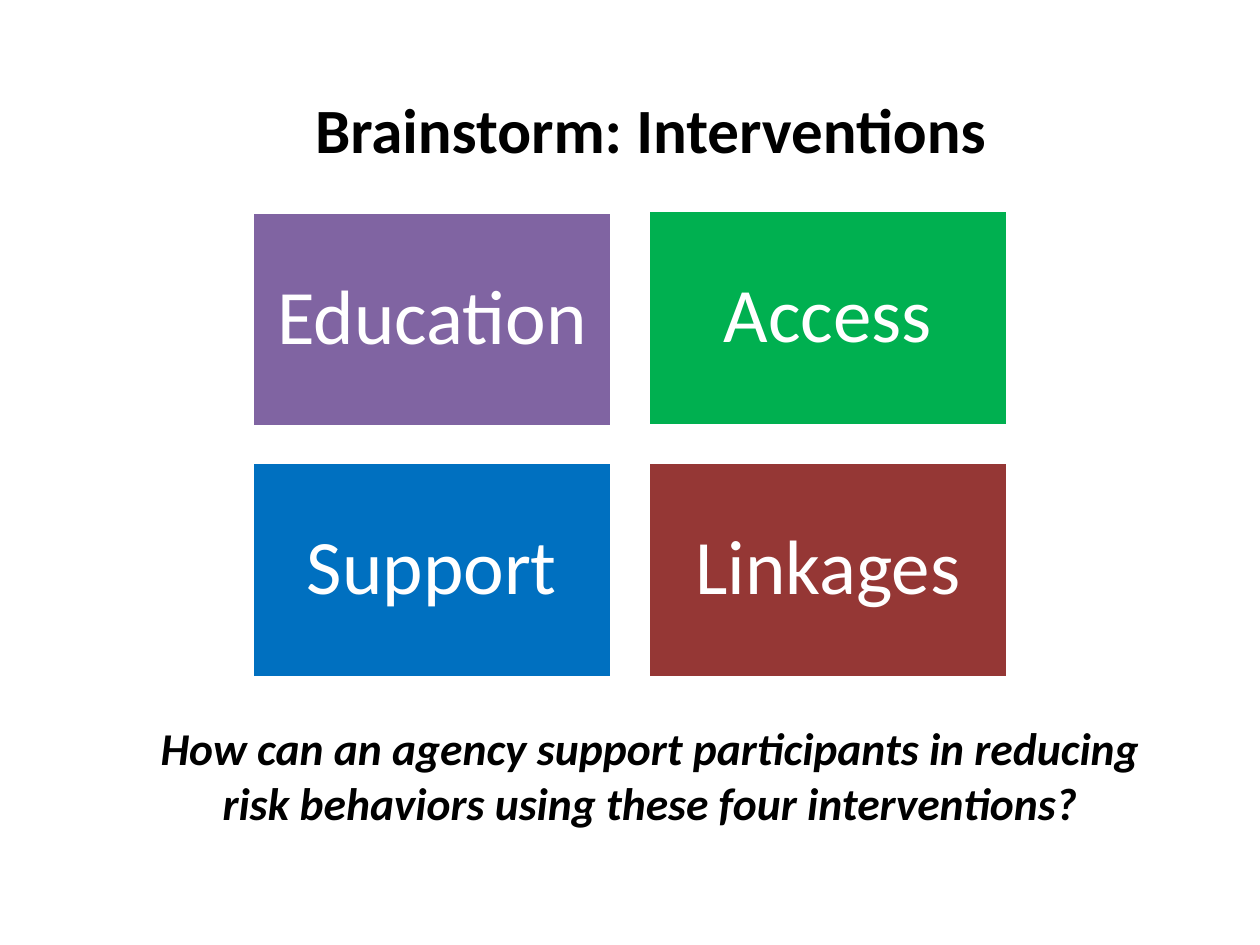
from dataclasses import dataclass

from pptx import Presentation
from pptx.dml.color import RGBColor
from pptx.enum.shapes import MSO_SHAPE
from pptx.enum.text import MSO_ANCHOR, MSO_AUTO_SIZE, PP_ALIGN
from pptx.util import Cm, Pt

RECTANGLE = MSO_SHAPE.RECTANGLE
TOP = MSO_ANCHOR.TOP
MIDDLE = MSO_ANCHOR.MIDDLE
CENTER = PP_ALIGN.CENTER
NO_AUTOFIT = MSO_AUTO_SIZE.NONE


@dataclass(frozen=True)
class Theme:
    font: str = "Calibri"
    text: str = "000000"
    light: str = "FFFFFF"
    purple: str = "8064A2"
    green: str = "00B050"
    blue: str = "0070C0"
    red: str = "953735"
    title_size: int = 36
    card_size: int = 44
    question_size: int = 26


theme = Theme()


def write_text(shape, text, size, color, anchor, bold=False, italic=False):
    frame = shape.text_frame
    frame.text = text
    frame.word_wrap = True
    frame.auto_size = NO_AUTOFIT
    frame.vertical_anchor = anchor
    paragraph = frame.paragraphs[0]
    paragraph.alignment = CENTER
    font = paragraph.runs[0].font
    font.name = theme.font
    font.size = Pt(size)
    font.bold = bold
    font.italic = italic
    font.color.rgb = RGBColor.from_string(color)
    return frame


presentation = Presentation()
presentation.slide_width = Cm(25.4)
presentation.slide_height = Cm(19.05)
slide = presentation.slides.add_slide(presentation.slide_layouts[5])

title = slide.shapes.title
title.left, title.top, title.width, title.height = Cm(4.01), Cm(1.7), Cm(18.21), Cm(2.11)
write_text(title, "Brainstorm: Interventions", theme.title_size, theme.text, TOP, bold=True)

card_width, card_height = Cm(7.26), Cm(4.34)
left_column, right_column = Cm(5.08), Cm(13.06)
upper_row, lower_row = Cm(4.24), Cm(9.32)
education_offset = Cm(0.03)
interventions = [
    ("Education", theme.purple, left_column, upper_row + education_offset),
    ("Access", theme.green, right_column, upper_row),
    ("Support", theme.blue, left_column, lower_row),
    ("Linkages", theme.red, right_column, lower_row),
]

for name, color, left, top in interventions:
    card = slide.shapes.add_shape(RECTANGLE, left, top, card_width, card_height)
    card.shadow.inherit = False
    card.fill.solid()
    card.fill.fore_color.rgb = RGBColor.from_string(color)
    card.line.color.rgb = RGBColor.from_string(theme.light)
    card.line.width = Pt(2)
    frame = write_text(card, name, theme.card_size, theme.light, MIDDLE)
    frame.margin_left = frame.margin_right = Cm(0.46)
    frame.margin_top = frame.margin_bottom = Cm(0.46)
    frame.paragraphs[0].line_spacing = 0.9

question = slide.shapes.add_textbox(Cm(2.74), Cm(14.4), Cm(20.75), Cm(2.34))
write_text(
    question,
    "How can an agency support participants in reducing risk behaviors using these four interventions?",
    theme.question_size,
    theme.text,
    TOP,
    bold=True,
    italic=True,
)

presentation.save("out.pptx")
